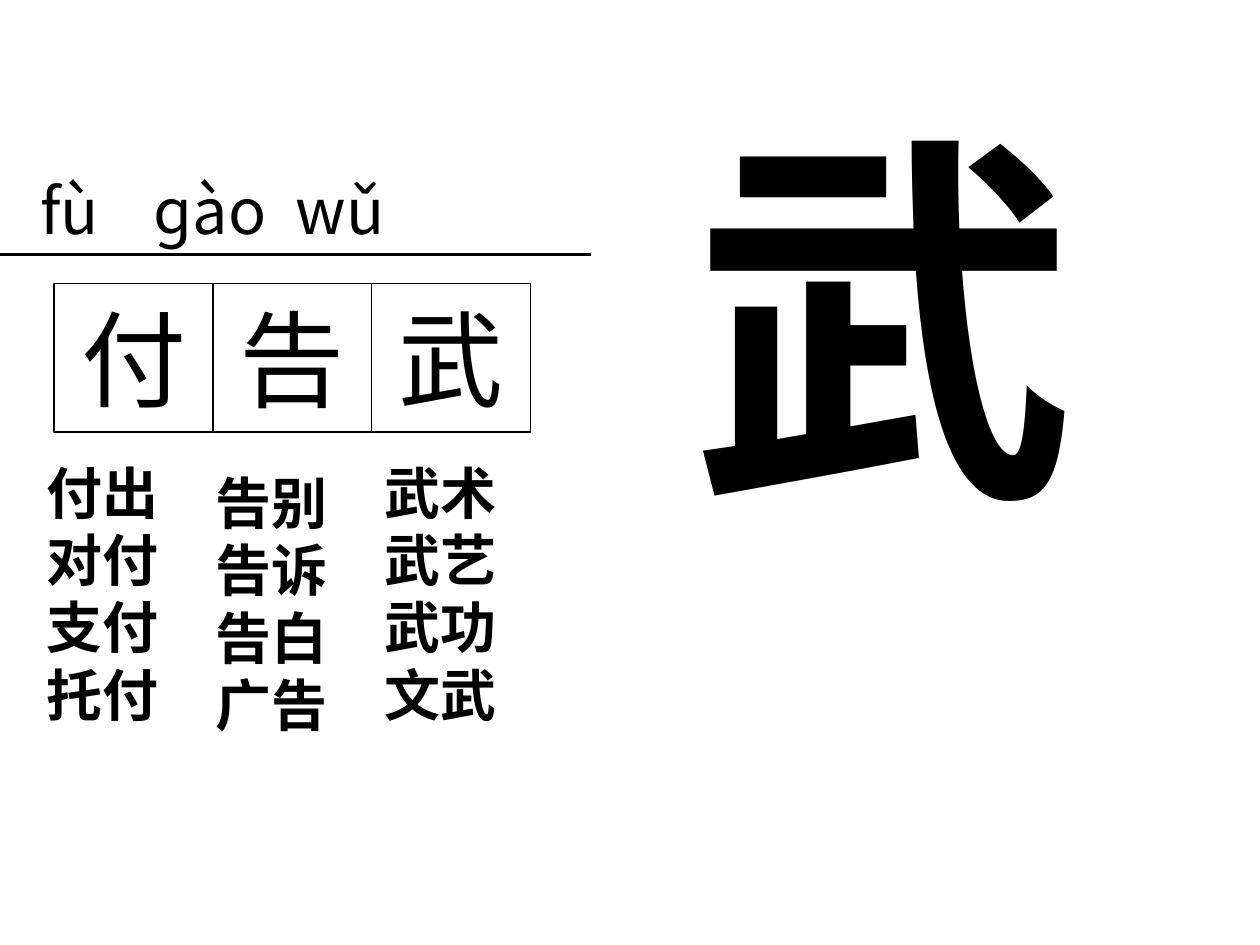
from lxml import etree
from pptx import Presentation
from pptx import util as u
from pptx.dml.color import RGBColor
from pptx.enum import shapes, text
from pptx.oxml.ns import qn

BLACK = "000000"
SANS = "Noto Sans CJK SC"


def color(value):
    return RGBColor.from_string(value)


def write(shape, content, size, font, bold=False):
    shape.text_frame.text = content
    paragraph = shape.text_frame.paragraphs[0]
    run = paragraph.runs[0]
    run.font.size = u.Pt(size)
    run.font.name = font
    run.font.bold = bold
    run.font.color.rgb = color(BLACK)
    east_asian = etree.SubElement(run.font._element, qn("a:ea"))
    east_asian.set("typeface", font)
    return paragraph


presentation = Presentation()
presentation.slide_width = u.Inches(10)
presentation.slide_height = u.Inches(7.5)
slide = presentation.slides.add_slide(presentation.slide_layouts[6])

rule = slide.shapes.add_connector(
    shapes.MSO_CONNECTOR.STRAIGHT, u.Inches(0), u.Inches(2.02), u.Inches(4.69), u.Inches(2.02))
rule.line.color.rgb = color(BLACK)
rule.line.width = u.Pt(2.25)
etree.SubElement(rule._element.spPr, qn("a:effectLst"))

for column, character in enumerate("付告武"):
    square = slide.shapes.add_shape(
        shapes.MSO_SHAPE.RECTANGLE, u.Inches(0.43 + 1.26 * column), u.Inches(2.25),
        u.Inches(1.26), u.Inches(1.18))
    square.shadow.inherit = False
    square.fill.background()
    square.line.color.rgb = color(BLACK)
    square.line.width = u.Pt(0.75)
    square.text_frame.word_wrap = False
    square.text_frame.vertical_anchor = text.MSO_ANCHOR.MIDDLE
    write(square, character, 60, "Arial").alignment = text.PP_ALIGN.CENTER

text_boxes = [
    ("付出对付支付托付", 0.27, 3.59, 1.34, 2.23, 32, SANS, True),
    ("告别告诉告白广告", 1.61, 3.67, 1.34, 2.23, 32, SANS, True),
    ("武术武艺武功文武", 2.95, 3.59, 1.34, 2.23, 32, SANS, True),
    ("\tfù\tɡào\twǔ", 0, 1.31, 4.69, 0.7, 36, SANS, False),
    ("武", 5.39, 0.6, 3.47, 3.77, 220, "Arial", True),
]
for content, left, top, width, height, size, font, bold in text_boxes:
    box = slide.shapes.add_textbox(u.Inches(left), u.Inches(top), u.Inches(width), u.Inches(height))
    box.text_frame.word_wrap = True
    paragraph = write(box, content, size, font, bold)
    if "\t" in content:
        tab_list = etree.SubElement(paragraph._p.get_or_add_pPr(), qn("a:tabLst"))
        for position in (0.22, 1.12, 2.25):
            etree.SubElement(tab_list, qn("a:tab"), pos=str(u.Inches(position)), algn="l")

presentation.save("out.pptx")
